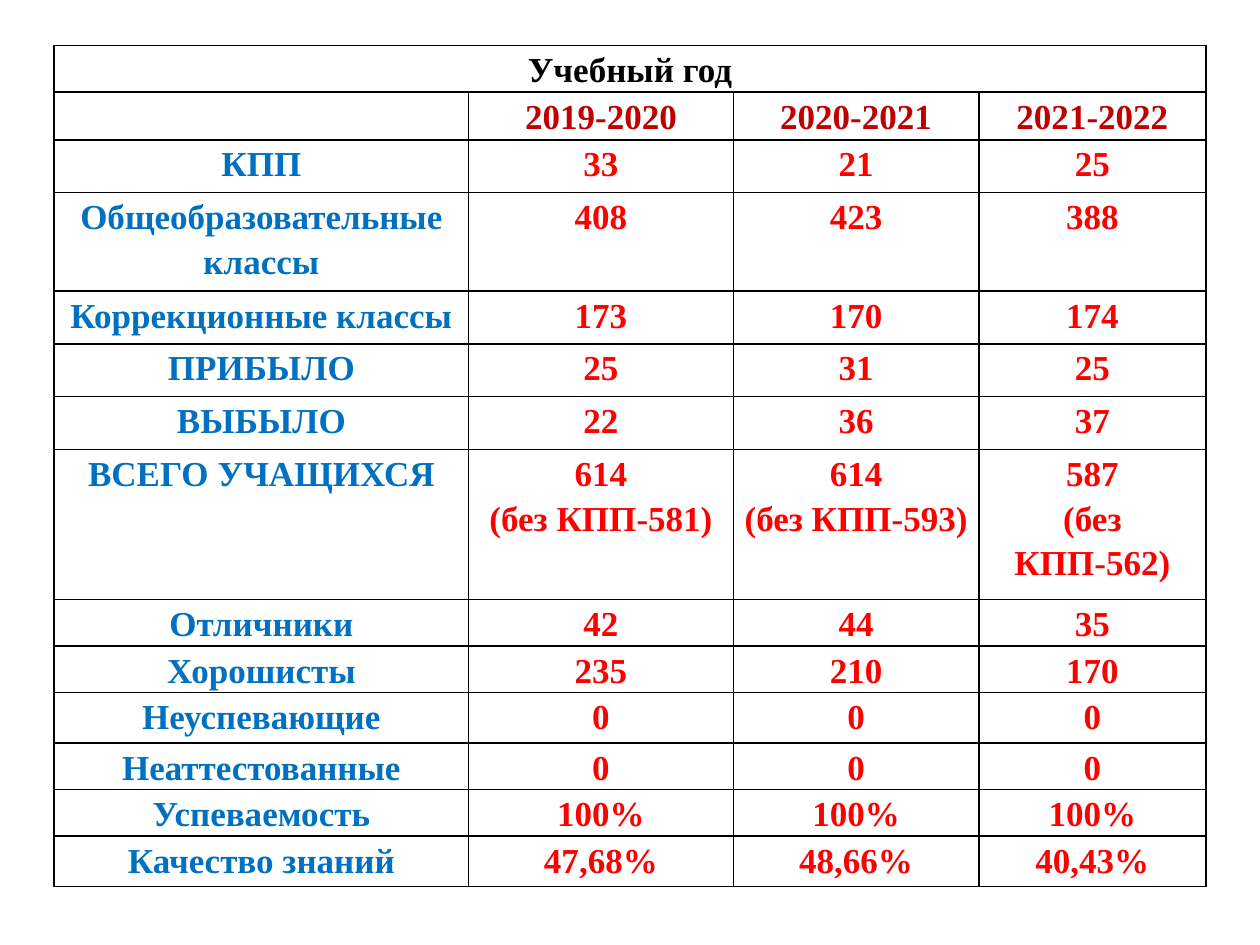
from pptx import Presentation
from pptx.dml.color import RGBColor
from pptx.enum.text import PP_ALIGN
from pptx.oxml import parse_xml
from pptx.oxml.ns import nsdecls
from pptx.util import Inches, Pt

BLACK, CRIMSON, BLUE, RED = "000000", "C00000", "0070C0", "FF0000"
COLUMN_WIDTHS = [3.29, 2.1, 1.95, 1.8]
ROWS = [
    (0.37, ["Учебный год", "", "", ""]),
    (0.38, ["", "2019-2020", "2020-2021", "2021-2022"]),
    (0.42, ["КПП", "33", "21", "25"]),
    (0.78, ["Общеобразовательные классы", "408", "423", "388"]),
    (0.42, ["Коррекционные классы", "173", "170", "174"]),
    (0.42, ["ПРИБЫЛО", "25", "31", "25"]),
    (0.42, ["ВЫБЫЛО", "22", "36", "37"]),
    (1.19, ["ВСЕГО УЧАЩИХСЯ", "614\n(без КПП-581)", "614\n(без КПП-593)", "587\n(без КПП-562)"]),
    (0.37, ["Отличники", "42", "44", "35"]),
    (0.37, ["Хорошисты", "235", "210", "170"]),
    (0.4, ["Неуспевающие", "0", "0", "0"]),
    (0.37, ["Неаттестованные", "0", "0", "0"]),
    (0.37, ["Успеваемость", "100%", "100%", "100%"]),
    (0.4, ["Качество знаний", "47,68%", "48,66%", "40,43%"]),
]


def color(value):
    return RGBColor.from_string(value)


def text_color(row, column):
    if row == 0:
        return BLACK
    if row == 1:
        return CRIMSON
    return BLUE if column == 0 else RED


class PageBuilder:
    """Holds the text style and the current slide."""

    def __init__(self, page, font="Times New Roman", size=20):
        self.page = page
        self.font = font
        self.size = size

    def table(self, left, top, widths, rows):
        total_height = sum(height for height, _ in rows)
        frame = self.page.shapes.add_table(
            len(rows), len(widths), Inches(left), Inches(top),
            Inches(sum(widths)), Inches(total_height))
        table = frame.table
        table.first_row = False
        table.horz_banding = False
        for column, width in zip(table.columns, widths):
            column.width = Inches(width)
        for row_index, (height, texts) in enumerate(rows):
            table.rows[row_index].height = Inches(height)
            for column_index, text in enumerate(texts):
                self.cell(table.cell(row_index, column_index), text,
                          text_color(row_index, column_index))
        return table

    def cell(self, cell, text, text_hex):
        cell.margin_left = cell.margin_right = Inches(0.07)
        cell.margin_top = cell.margin_bottom = 0
        cell.text_frame.text = text
        for para in cell.text_frame.paragraphs:
            para.alignment = PP_ALIGN.CENTER
            para.line_spacing = 1.15
            for span in para.runs:
                span.font.name = self.font
                span.font.size = Pt(self.size)
                span.font.bold = True
                span.font.color.rgb = color(text_hex)
        self.borders(cell)
        cell.fill.background()

    def borders(self, cell, line_hex=BLACK, width=1):
        properties = cell._tc.get_or_add_tcPr()
        for side in ("lnL", "lnR", "lnT", "lnB"):
            properties.append(parse_xml(
                f'<a:{side} {nsdecls("a")} w="{Pt(width)}"><a:solidFill>'
                f'<a:srgbClr val="{line_hex}"/></a:solidFill></a:{side}>'))


def main():
    deck = Presentation()
    deck.slide_width, deck.slide_height = Inches(10), Inches(7.5)
    page = deck.slides.add_slide(deck.slide_layouts[6])
    table = PageBuilder(page).table(0.43, 0.36, COLUMN_WIDTHS, ROWS)
    table.cell(0, 0).merge(table.cell(0, len(COLUMN_WIDTHS) - 1))
    deck.save("out.pptx")


if __name__ == "__main__":
    main()
